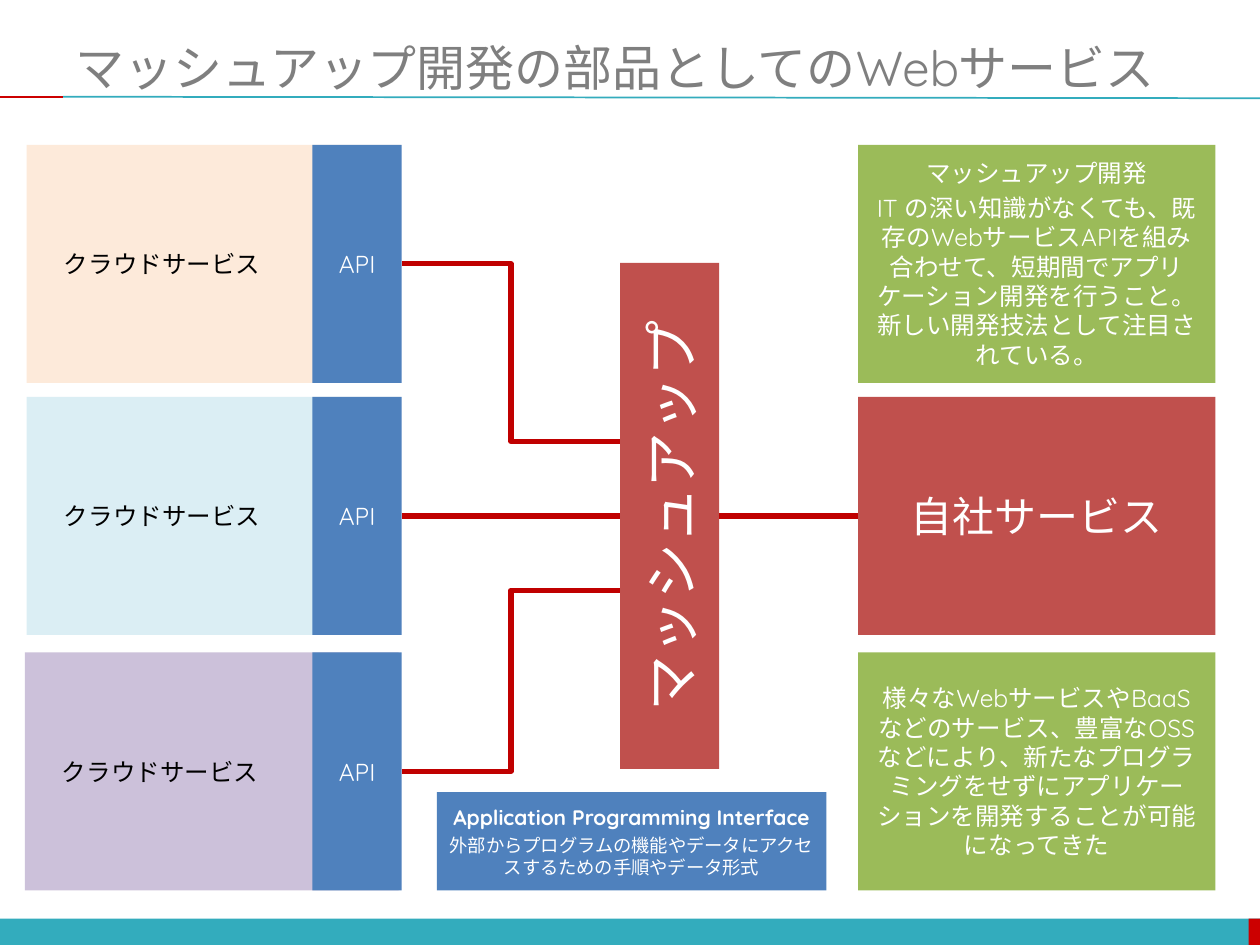
from pptx import Presentation
from pptx.dml.color import RGBColor
from pptx.enum.shapes import MSO_CONNECTOR, MSO_SHAPE
from pptx.enum.text import MSO_ANCHOR, PP_ALIGN
from pptx.oxml.ns import qn
from pptx.util import Cm, Pt
from lxml.etree import SubElement

COLORS = {
    "teal": "33ACBD", "red": "CC0000", "gray": "7F7F7F", "black": "000000",
    "white": "FFFFFF", "peach": "FDEADA", "aqua": "DBEEF4", "lilac": "CCC1DA",
    "blue": "4F81BD", "green": "9BBB59", "brick": "C0504D", "link": "C00000",
}


class SlideBuilder:
    """Holds the slide and its style, with one method per kind of element."""

    font = "Quicksand"

    def __init__(self, s):
        self.s = s

    def color(self, name):
        return RGBColor.from_string(COLORS[name])

    def add_text(self, tf, paragraphs, color, align):
        tf.word_wrap = True
        tf.vertical_anchor = MSO_ANCHOR.MIDDLE
        for i, (text, size, bold) in enumerate(paragraphs):
            p = tf.add_paragraph() if i else tf.paragraphs[0]
            p.alignment = align
            if i:
                p.space_before = Pt(round(size * 0.2, 1))
            r = p.add_run()
            r.text = text
            r.font.name = self.font
            r.font.size = Pt(size)
            r.font.bold = bold
            r.font.color.rgb = self.color(color)

    def title(self, text, x, y, w, h):
        sp = self.s.shapes.add_textbox(Cm(x), Cm(y), Cm(w), Cm(h))
        self.add_text(sp.text_frame, [(text, 28, False)], "gray", PP_ALIGN.LEFT)

    def box(self, x, y, w, h, fill, paragraphs=(), color="white",
            align=PP_ALIGN.CENTER, indent=0.25):
        sp = self.s.shapes.add_shape(MSO_SHAPE.RECTANGLE, Cm(x), Cm(y), Cm(w), Cm(h))
        sp.shadow.inherit = False
        sp.fill.solid()
        sp.fill.fore_color.rgb = self.color(fill)
        sp.line.fill.background()
        sp.text_frame.margin_left = Cm(indent)
        self.add_text(sp.text_frame, paragraphs, color, align)
        return sp

    def line(self, x1, y1, x2, y2, color="link", width=3,
             kind=MSO_CONNECTOR.STRAIGHT, begin=None, end=None):
        c = self.s.shapes.add_connector(kind, Cm(x1), Cm(y1), Cm(x2), Cm(y2))
        c.line.color.rgb = self.color(color)
        c.line.width = Pt(width)
        SubElement(c._element.spPr, qn("a:effectLst"))
        if begin:
            c.begin_connect(*begin)
            c.begin_x, c.begin_y = Cm(x1), Cm(y1)
        if end:
            c.end_connect(*end)
            c.end_x, c.end_y = Cm(x2), Cm(y2)


def main():
    prs = Presentation()
    prs.slide_width, prs.slide_height = Cm(25.4), Cm(19.05)
    b = SlideBuilder(prs.slides.add_slide(prs.slide_layouts[6]))

    b.box(0, 18.52, 25.4, 0.55, "teal")
    b.box(25.17, 18.52, 0.23, 0.55, "red")
    b.line(1.27, 1.95, 25.4, 1.98, "teal", 1)
    b.line(0, 1.95, 1.27, 1.95, "red", 1)
    b.title("マッシュアップ開発の部品としてのWebサービス", 1.27, 0.76, 24.13, 1.17)

    rows, height = (2.92, 8.0, 13.15), 4.8
    middles = [y + height / 2 for y in rows]
    apis = []
    for x, y, fill in zip((0.54, 0.54, 0.5), rows, ("peach", "aqua", "lilac")):
        b.box(x, y, 7.54, height, fill, [("クラウドサービス", 14, False)],
              "black", PP_ALIGN.LEFT, 0.75)
        apis.append(b.box(6.3, y, 1.8, height, "blue", [("API", 14, False)]))

    right, width = 17.3, 7.2
    b.box(right, rows[0], width, height, "green", [
        ("マッシュアップ開発", 14, False),
        ("IT の深い知識がなくても、既存のWebサービスAPIを組み合わせて、短期間で"
         "アプリケーション開発を行うこと。新しい開発技法として注目されている。", 14, False),
    ])
    b.box(right, rows[2], width, height, "green", [
        ("様々なWebサービスやBaaSなどのサービス、豊富なOSSなどにより、新たな"
         "プログラミングをせずにアプリケーションを開発することが可能になってきた", 14, False),
    ])

    center = middles[1]
    for start, offset in ((middles[0], -1.5), (middles[2], 1.5)):
        b.line(8.1, start, 12.5, center + offset, kind=MSO_CONNECTOR.ELBOW)

    mashup = b.box(8.4, center - 1, 10.2, 2, "brick", [("マッシュアップ", 32, False)])
    mashup.rotation = 270
    own = b.box(right, rows[1], width, height, "brick", [("自社サービス", 24, False)])
    b.line(8.1, center, 12.5, center, begin=(apis[1], 3), end=(mashup, 0))
    b.line(14.5, center, right, center, begin=(mashup, 2), end=(own, 1))

    b.box(8.81, 15.97, 7.85, 1.98, "blue", [
        ("Application Programming Interface", 12, True),
        ("外部からプログラムの機能やデータにアクセスするための手順やデータ形式", 10.5, False),
    ])
    prs.save("out.pptx")


if __name__ == "__main__":
    main()
